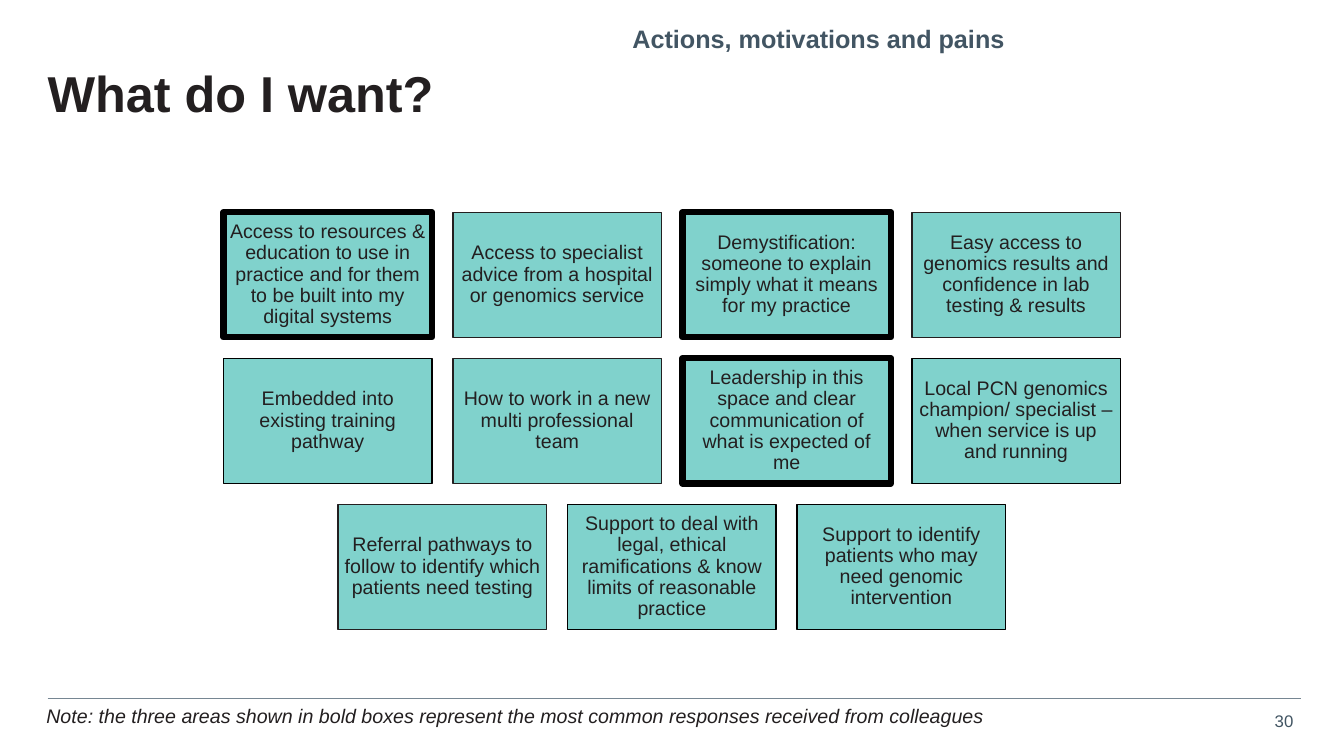
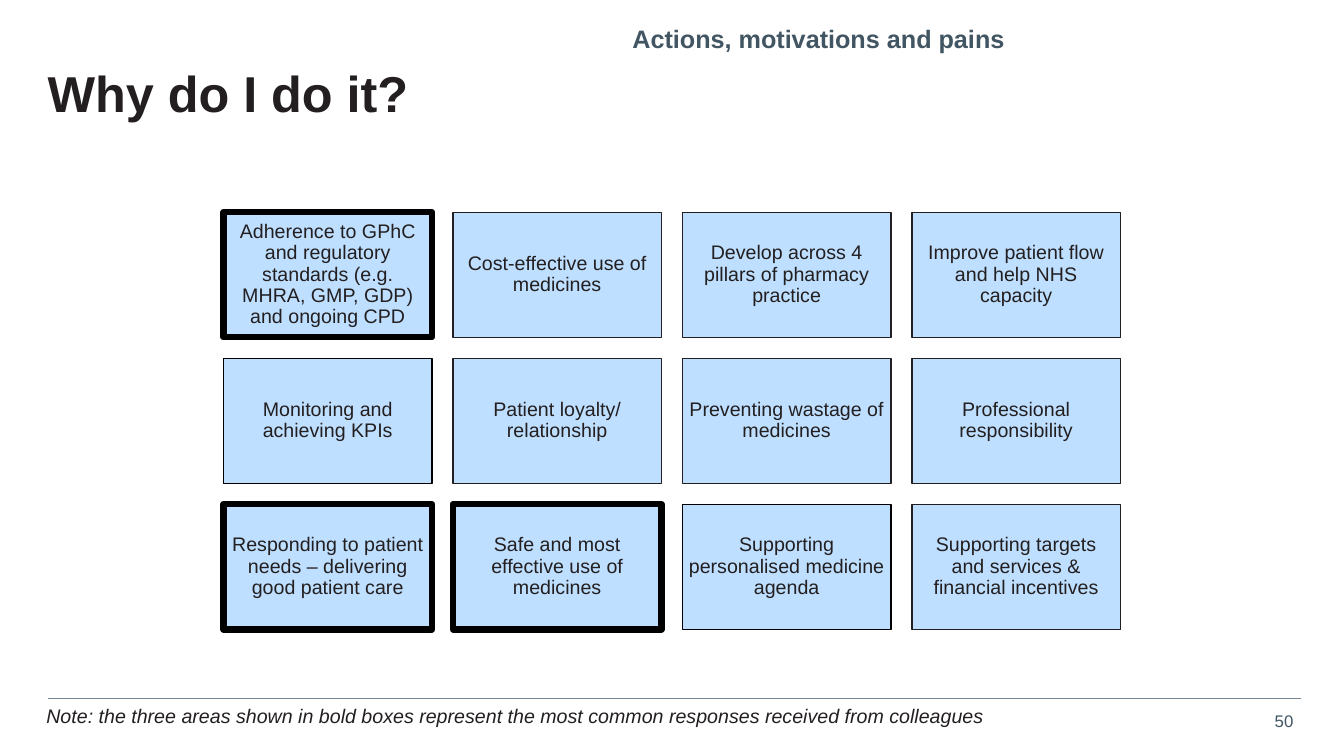
"""Build two slides of response cards about motivations in genomics and pharmacy."""
from dataclasses import dataclass

from lxml import etree
from pptx import Presentation
from pptx.dml.color import RGBColor
from pptx.enum.shapes import MSO_CONNECTOR, MSO_SHAPE
from pptx.enum.text import MSO_ANCHOR, MSO_AUTO_SIZE, PP_ALIGN
from pptx.oxml.ns import qn
from pptx.util import Pt

RECTANGLE = MSO_SHAPE.RECTANGLE
STRAIGHT = MSO_CONNECTOR.STRAIGHT
TOP, MIDDLE = MSO_ANCHOR.TOP, MSO_ANCHOR.MIDDLE
LEFT, CENTER, RIGHT = PP_ALIGN.LEFT, PP_ALIGN.CENTER, PP_ALIGN.RIGHT
NO_AUTOFIT = MSO_AUTO_SIZE.NONE


@dataclass(frozen=True)
class Theme:
    """Colours and type sizes shared by the slides."""
    font: str = "Arial"
    ink: str = "231F20"
    black: str = "000000"
    slate: str = "425563"
    rule: str = "768692"
    teal: str = "80D2CC"
    sky: str = "BEDFFF"
    title_size: int = 36
    kicker_size: int = 18
    body_size: int = 14
    number_size: int = 12


THEME = Theme()
BORDERS = {
    "ink": (THEME.ink, 1),
    "black": (THEME.black, 1),
    "bold": (THEME.black, 4.5),
}

KICKER = "Actions, motivations and pains"
NOTE = ("Note: the three areas shown in bold boxes represent "
        "the most common responses received from colleagues")
SLIDES = [
    {
        "title": "What do I want?",
        "number": "30",
        "fill": THEME.teal,
        "rows": [
            [
                ("Access to resources & education to use in practice and for "
                 "them to be built into my digital systems", "bold"),
                ("Access to specialist advice from a hospital or genomics service", "ink"),
                ("Demystification: someone to explain simply what it means "
                 "for my practice", "bold"),
                ("Easy access to genomics results and confidence in lab "
                 "testing & results", "ink"),
            ],
            [
                ("Embedded into existing training pathway", "black"),
                ("How to work in a new multi professional team", "ink"),
                ("Leadership in this space and clear communication of what "
                 "is expected of me", "bold"),
                ("Local PCN genomics champion/ specialist – when service is "
                 "up and running", "black"),
            ],
            [
                ("Referral pathways to follow to identify which patients "
                 "need testing", "ink"),
                ("Support to deal with legal, ethical ramifications & know "
                 "limits of reasonable practice", "black"),
                ("Support to identify patients who may need genomic intervention", "black"),
            ],
        ],
    },
    {
        "title": "Why do I do it?",
        "number": "50",
        "fill": THEME.sky,
        "rows": [
            [
                ("Adherence to GPhC and regulatory standards (e.g. MHRA, GMP, "
                 "GDP) and ongoing CPD", "bold"),
                ("Cost-effective use of medicines", "ink"),
                ("Develop across 4 pillars of pharmacy practice", "ink"),
                ("Improve patient flow and help NHS capacity", "ink"),
            ],
            [
                ("Monitoring and achieving KPIs", "black"),
                ("Patient loyalty/ relationship", "ink"),
                ("Preventing wastage of medicines", "ink"),
                ("Professional responsibility", "ink"),
            ],
            [
                ("Responding to patient needs – delivering good patient care", "bold"),
                ("Safe and most effective use of medicines", "bold"),
                ("Supporting personalised medicine agenda", "black"),
                ("Supporting targets and services & financial incentives", "ink"),
            ],
        ],
    },
]

PAGE_WIDTH, PAGE_HEIGHT = 960, 540
CARD_WIDTH, CARD_HEIGHT, CARD_GAP = 149, 89.4, 14.9
CARDS_TOP = 151.6
CARD_INSET = 4.4
MARGIN = 34
RULE_RIGHT, RULE_Y = 929.6, 498.8


def write(box, text, size, color=THEME.ink, align=LEFT, anchor=TOP, inset=None,
          spacing=None, bold=False, italic=False):
    """Put one formatted paragraph into a shape."""
    frame = box.text_frame
    frame.text = text
    frame.word_wrap = True
    frame.auto_size = NO_AUTOFIT
    frame.vertical_anchor = anchor
    if inset is not None:
        frame.margin_left = frame.margin_right = Pt(inset)
        frame.margin_top = frame.margin_bottom = Pt(inset)
    para = frame.paragraphs[0]
    para.alignment = align
    para.space_before = Pt(0)
    if spacing is not None:
        para.line_spacing = spacing
    font = para.runs[0].font
    font.name, font.size = THEME.font, Pt(size)
    font.bold, font.italic = bold, italic
    font.color.rgb = RGBColor.from_string(color)


def add_text(page, area, text, size, **style):
    """Add a text box at left, top, width, height."""
    write(page.shapes.add_textbox(*map(Pt, area)), text, size, **style)


def add_frame(page, title, number):
    """Add the title, kicker, footer rule, note and page number."""
    heading = page.shapes.title
    heading.left, heading.top = Pt(MARGIN), Pt(49)
    heading.width, heading.height = Pt(898), Pt(49)
    write(heading, title, THEME.title_size, inset=0, spacing=0.9, bold=True)
    add_text(page, (344, 16.5, 373.7, 45), KICKER, THEME.kicker_size,
             color=THEME.slate, align=RIGHT, inset=0, spacing=Pt(22), bold=True)

    rule = page.shapes.add_connector(
        STRAIGHT, Pt(MARGIN), Pt(RULE_Y), Pt(RULE_RIGHT), Pt(RULE_Y))
    rule.line.color.rgb = RGBColor.from_string(THEME.rule)
    rule.line.width = Pt(0.5)
    etree.SubElement(rule.element.spPr, qn("a:effectLst"))

    add_text(page, (26, 499, 898, 24.2), NOTE, THEME.body_size, italic=True)
    add_text(page, (901, 504, 30, 21.8), number, THEME.number_size,
             color=THEME.slate, align=RIGHT)


def add_card(page, left, top, text, fill, border):
    """Add one bordered response card."""
    card = page.shapes.add_shape(
        RECTANGLE, Pt(left), Pt(top), Pt(CARD_WIDTH), Pt(CARD_HEIGHT))
    card.shadow.inherit = False
    card.fill.solid()
    card.fill.fore_color.rgb = RGBColor.from_string(fill)
    color, width = BORDERS[border]
    card.line.color.rgb = RGBColor.from_string(color)
    card.line.width = Pt(width)
    write(card, text, THEME.body_size, align=CENTER, anchor=MIDDLE,
          inset=CARD_INSET, spacing=0.9)


def add_cards(page, rows, fill):
    """Lay out rows of cards, each row centred on the page."""
    for row_index, row in enumerate(rows):
        row_width = len(row) * (CARD_WIDTH + CARD_GAP) - CARD_GAP
        row_left = (PAGE_WIDTH - row_width) / 2
        top = CARDS_TOP + row_index * (CARD_HEIGHT + CARD_GAP)
        for column, (text, border) in enumerate(row):
            left = row_left + column * (CARD_WIDTH + CARD_GAP)
            add_card(page, left, top, text, fill, border)


def main():
    """Build and save the deck."""
    deck = Presentation()
    deck.slide_width, deck.slide_height = Pt(PAGE_WIDTH), Pt(PAGE_HEIGHT)
    title_only = deck.slide_layouts.get_by_name("Title Only")
    for content in SLIDES:
        page = deck.slides.add_slide(title_only)
        add_frame(page, content["title"], content["number"])
        add_cards(page, content["rows"], content["fill"])
    deck.save("out.pptx")


if __name__ == "__main__":
    main()
